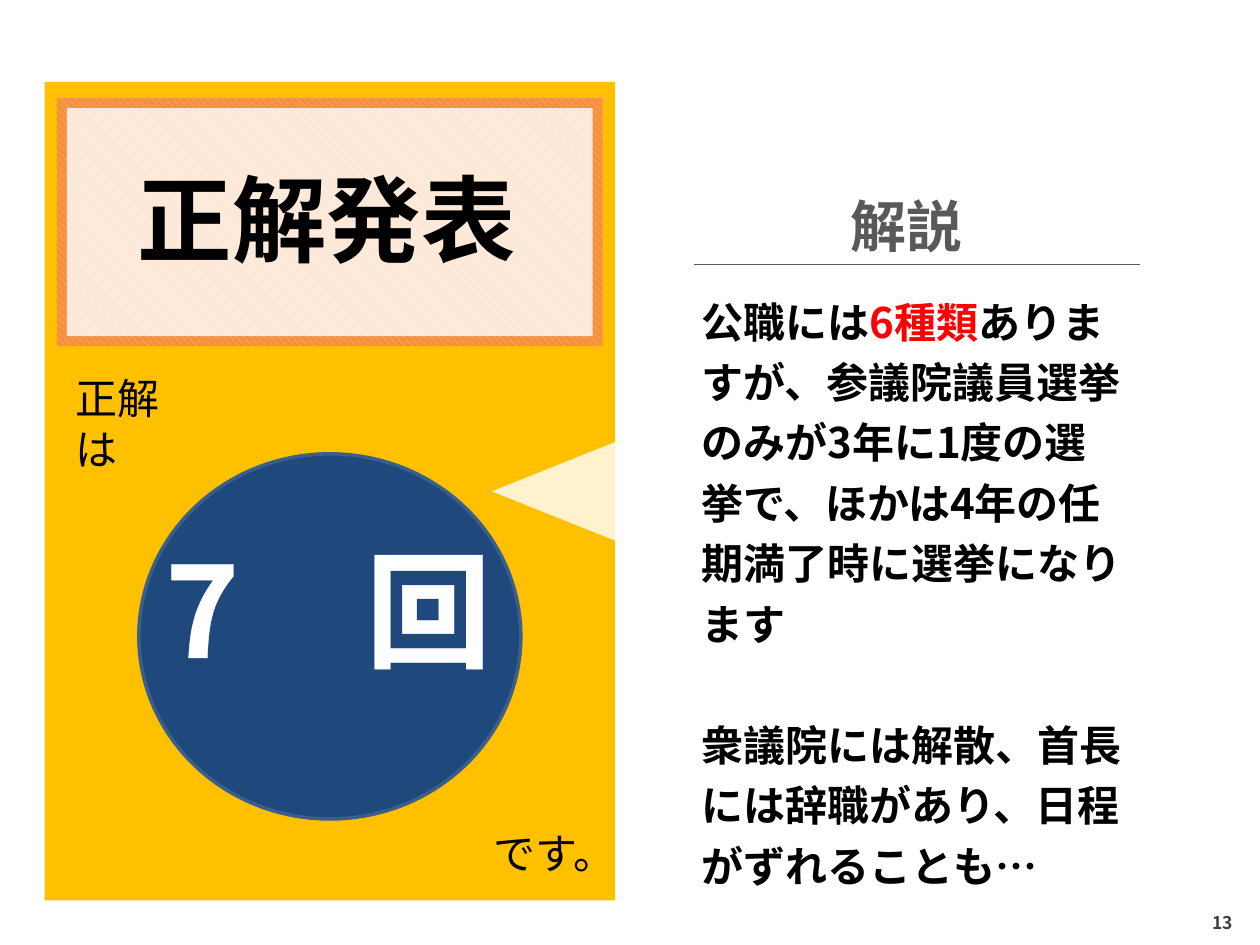
from dataclasses import dataclass

from lxml.etree import SubElement
from pptx import Presentation
from pptx.dml.color import RGBColor as Rgb
from pptx.enum.dml import MSO_PATTERN as Pattern
from pptx.enum.shapes import MSO_CONNECTOR as Connector, MSO_SHAPE as Preset
from pptx.enum.text import MSO_ANCHOR as Anchor, PP_ALIGN as Align
from pptx.oxml.ns import qn
from pptx.util import Cm, Pt


@dataclass(frozen=True)
class Theme:
    font: str = "Noto Sans CJK JP"
    white: str = "FFFFFF"
    black: str = "000000"
    red: str = "FF0000"
    grey: str = "595959"
    dark_grey: str = "404040"
    amber: str = "FFC000"
    orange: str = "F79646"
    dark_orange: str = "E46C0A"
    navy: str = "1F497D"
    navy_edge: str = "3A5F8C"
    answer_size: int = 72
    title_size: int = 54
    heading_size: int = 32
    body_size: int = 24
    number_size: int = 10


class SlideBuilder:
    def __init__(self, slide, theme):
        self.shapes = slide.shapes
        self.theme = theme

    def shape(self, preset, box, color, opacity=100, edge=None, edge_width=0.5):
        item = self.shapes.add_shape(preset, *map(Cm, box))
        item.shadow.inherit = False
        item.fill.solid()
        item.fill.fore_color.rgb = Rgb.from_string(color)
        if opacity < 100:
            srgb = item.fill._xPr.find(".//" + qn("a:srgbClr"))
            SubElement(srgb, qn("a:alpha"), val=str(opacity * 1000))
        if edge:
            item.line.color.rgb = Rgb.from_string(edge)
            item.line.width = Pt(edge_width)
        else:
            item.line.fill.background()
        return item

    def hatched(self, box, front, back):
        item = self.shape(Preset.RECTANGLE, box, back)
        item.fill.patterned()
        item.fill.pattern = Pattern.WIDE_DOWNWARD_DIAGONAL
        item.fill.fore_color.rgb = Rgb.from_string(front)
        item.fill.back_color.rgb = Rgb.from_string(back)

    def rule(self, left, right, y, color, width):
        item = self.shapes.add_connector(Connector.STRAIGHT, Cm(left), Cm(y), Cm(right), Cm(y))
        item.line.color.rgb = Rgb.from_string(color)
        item.line.width = Pt(width)
        SubElement(item._element.spPr, qn("a:effectLst"))

    def style_run(self, run, size, color, bold):
        run.font.size = Pt(size)
        run.font.bold = bold
        run.font.name = self.theme.font
        run.font.color.rgb = Rgb.from_string(color)
        SubElement(run._r.get_or_add_rPr(), qn("a:ea"), typeface=self.theme.font)

    def text(self, box, content, size, color, bold=True, align=Align.LEFT, wrap=False):
        frame = self.shapes.add_textbox(*map(Cm, box)).text_frame
        frame.word_wrap = wrap
        frame.text = content
        paragraph = frame.paragraphs[0]
        paragraph.alignment = align
        self.style_run(paragraph.runs[0], size, color, bold)
        return paragraph.runs[0]

    def outline(self, run, color, width):
        """Draw a line around the letters of a run."""
        properties = run._r.get_or_add_rPr()
        line = SubElement(properties, qn("a:ln"), w=str(Pt(width)))
        fill = SubElement(line, qn("a:solidFill"))
        SubElement(fill, qn("a:srgbClr"), val=color)
        properties.insert(0, line)

    def body(self, box, paragraphs, size, line_spacing, gap):
        """Each paragraph is a list of (text, color) pairs."""
        frame = self.shapes.add_textbox(*map(Cm, box)).text_frame
        frame.word_wrap = True
        for index, pieces in enumerate(paragraphs):
            paragraph = frame.add_paragraph() if index else frame.paragraphs[0]
            paragraph.line_spacing = line_spacing
            if index:
                paragraph.space_before = Pt(gap)
            for content, color in pieces:
                run = paragraph.add_run()
                run.text = content
                self.style_run(run, size, color, True)

    def page_number(self, box, number):
        item = self.shape(Preset.RECTANGLE, box, self.theme.white)
        frame = item.text_frame
        frame.word_wrap = False
        frame.vertical_anchor = Anchor.MIDDLE
        frame.margin_left = frame.margin_right = Cm(0.1)
        frame.margin_top = frame.margin_bottom = Cm(0.1)
        frame.text = number
        frame.paragraphs[0].alignment = Align.CENTER
        self.style_run(frame.paragraphs[0].runs[0], self.theme.number_size,
                       self.theme.dark_grey, True)


def add_panels(builder, theme):
    builder.shape(Preset.RECTANGLE, (0.46, 0.48, 24.51, 18.11), theme.white, 20, theme.white)
    builder.shape(Preset.RECTANGLE, (0.9, 1.65, 11.5, 16.5), theme.amber)
    builder.hatched((1.15, 1.98, 11, 5), theme.dark_orange, theme.orange)
    builder.shape(Preset.RECTANGLE, (1.35, 2.18, 10.6, 4.6), theme.white, 80)
    explanation = builder.shape(Preset.ROUNDED_RECTANGLE, (12.85, 1.65, 11.65, 16.5),
                                theme.white, 80)
    explanation.adjustments[0] = 0.06
    pointer = builder.shape(Preset.ISOSCELES_TRIANGLE, (10.24, 8.28, 2.6, 3.25), theme.white, 80)
    pointer.rotation = 270
    builder.page_number((23.9, 18.16, 1.5, 0.89), "13")


def add_answer(builder, theme):
    builder.text((2.49, 3.12, 8.2, 2.57), "正解発表", theme.title_size, theme.black,
                 align=Align.CENTER)
    builder.text((1.28, 7.39, 2.95, 1.27), "正解は", theme.body_size, theme.black,
                 bold=False, wrap=True)
    builder.text((9.7, 16.56, 2.51, 1.27), "です。", theme.body_size, theme.black, bold=False)


def add_explanation(builder, theme):
    builder.text((16.89, 3.73, 2.79, 1.63), "解説", theme.heading_size, theme.grey,
                 align=Align.CENTER)
    builder.rule(14, 22.99, 5.33, theme.grey, 0.75)
    builder.body((13.89, 5.64, 8.97, 11.33), [
        [("公職には", theme.black), ("6種類", theme.red),
         ("ありますが、参議院議員選挙のみが3年に1度の選挙で、"
          "ほかは4年の任期満了時に選挙になります", theme.black)],
        [("衆議院には解散、首長には辞職があり、日程がずれることも…", theme.black)],
    ], theme.body_size, line_spacing=1.2, gap=34.5)


def add_count(builder, theme):
    builder.shape(Preset.OVAL, (2.8, 9.15, 7.7, 7.36), theme.navy,
                  edge=theme.navy_edge, edge_width=2)
    count = builder.text((1.27, 10.6, 10.7, 3.33), "7　回", theme.answer_size, theme.white,
                         align=Align.CENTER)
    builder.outline(count, theme.white, 1.5)


def main():
    deck = Presentation()
    deck.slide_width, deck.slide_height = Cm(25.4), Cm(19.05)
    theme = Theme()
    builder = SlideBuilder(deck.slides.add_slide(deck.slide_layouts[6]), theme)
    for add_part in (add_panels, add_answer, add_explanation, add_count):
        add_part(builder, theme)
    deck.save("out.pptx")


if __name__ == "__main__":
    main()
